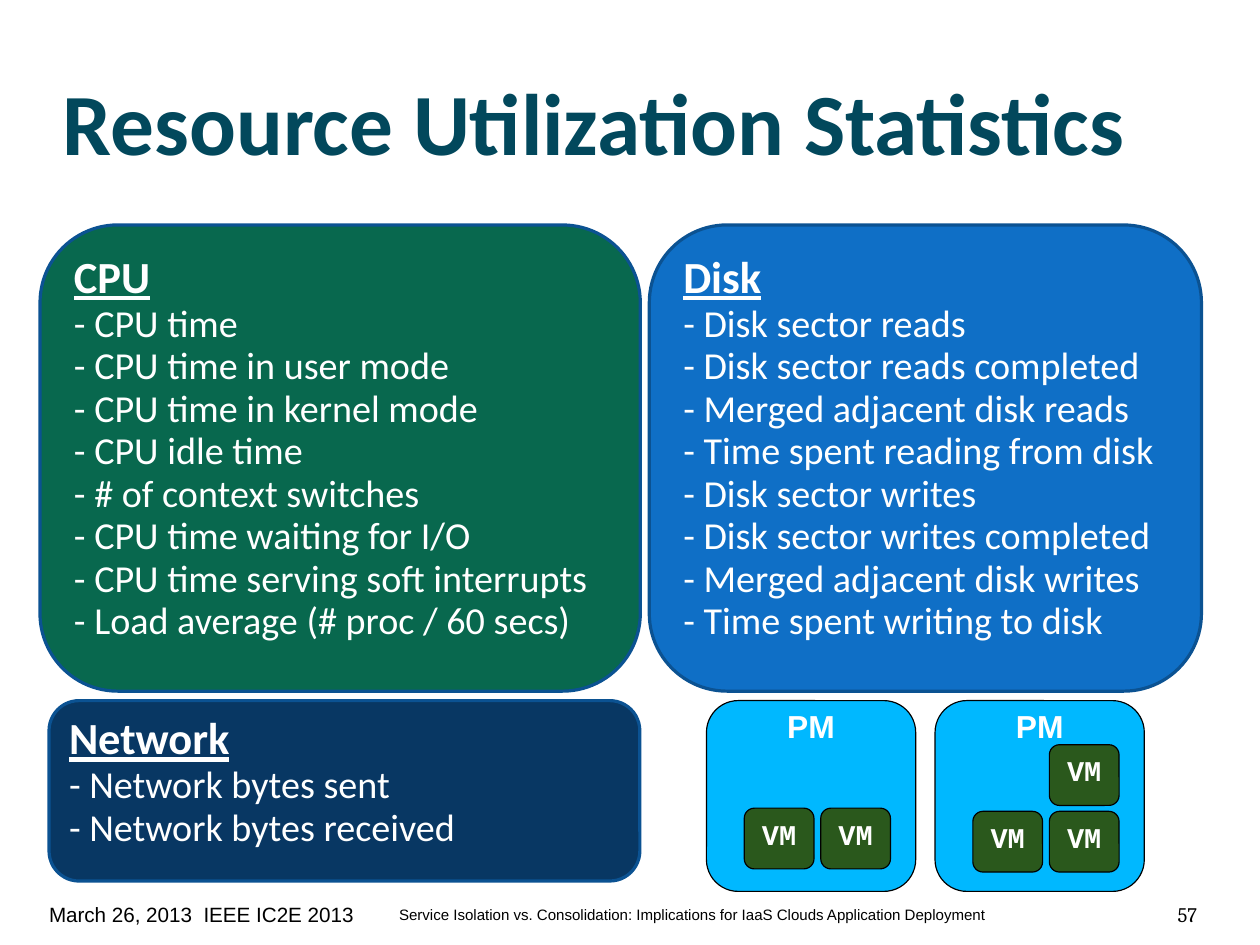
import pptx
import pptx.dml.color
import pptx.enum.shapes
import pptx.enum.text
import pptx.util

Cm, Pt = pptx.util.Cm, pptx.util.Pt
ALIGN = pptx.enum.text.PP_ALIGN
ANCHOR = pptx.enum.text.MSO_ANCHOR

COLORS = {
    "title": "02485C", "text": "000000", "light": "FFFFFF",
    "cpu": "08684E", "disk": "0F6FC6", "network": "083763",
    "card_line": "0B5292", "pm": "00B8FF", "vm": "2A581C",
}

# Content: cards as (heading, colour, box in cm, items)
TITLE = "Resource Utilization Statistics"
CARDS = [
    ("CPU", "cpu", (0.89, 5.0, 13.34, 10.36), [
        "CPU time", "CPU time in user mode", "CPU time in kernel mode",
        "CPU idle time", "# of context switches", "CPU time waiting for I/O",
        "CPU time serving soft interrupts", "Load average (# proc / 60 secs)"]),
    ("Disk", "disk", (14.43, 5.0, 12.27, 10.36), [
        "Disk sector reads", "Disk sector reads completed",
        "Merged adjacent disk reads", "Time spent reading from disk",
        "Disk sector writes", "Disk sector writes completed",
        "Merged adjacent disk writes", "Time spent writing to disk"]),
    ("Network", "network", (1.09, 15.57, 13.13, 4.01), [
        "Network bytes sent", "Network bytes received"]),
]
# Machines: left edge, top of the lower VM row, VM slots as (column, row up)
MACHINES = [
    (15.7, 17.96, [(1, 0), (0, 0)]),
    (20.78, 18.03, [(1, 1), (0, 0), (1, 0)]),
]
PM_TOP, PM_W, PM_H = 15.57, 4.65, 4.24
VM_W, VM_H, VM_INDENT = 1.55, 1.35, 0.84
VM_STEP_X, VM_STEP_Y = 1.7, 1.48
# Footer: text, left, width, size, font, alignment
FOOTER_TOP, FOOTER_H = 19.76, 1.12
FOOTER = [
    ("March 26, 2013  IEEE IC2E 2013", 1.09, 7.5, 13, "Arial", ALIGN.LEFT),
    ("Service Isolation vs. Consolidation: Implications for IaaS Clouds "
     "Application Deployment", 8.87, 14.5, 9.5, "Arial", ALIGN.LEFT),
    ("57", 25.65, 0.95, 13, "Cambria", ALIGN.RIGHT),
]

prs = pptx.Presentation()
prs.slide_width, prs.slide_height = Cm(28), Cm(21)
s = prs.slides.add_slide(prs.slide_layouts[6])


def rgb(name):
    return pptx.dml.color.RGBColor.from_string(COLORS[name])


def style(p, size, font, color, bold=False, align=ALIGN.LEFT, spacing=None):
    p.font.size, p.font.name, p.font.bold = Pt(size), font, bold
    p.font.color.rgb = rgb(color)
    p.alignment, p.line_spacing = align, spacing


def frame(sp, anchor, wrap, insets=(0, 0, 0, 0)):
    tf = sp.text_frame
    tf.vertical_anchor, tf.word_wrap = anchor, wrap
    tf.margin_left, tf.margin_top, tf.margin_right, tf.margin_bottom = map(Cm, insets)
    return tf


def label(text, box, size, font, color, bold=False, align=ALIGN.LEFT, top=0):
    sp = s.shapes.add_textbox(*map(Cm, box))
    tf = frame(sp, ANCHOR.MIDDLE, True, (0, top, 0, 0))
    tf.text = text
    style(tf.paragraphs[0], size, font, color, bold, align)


def rounded(box, fill, line, width):
    sp = s.shapes.add_shape(
        pptx.enum.shapes.MSO_SHAPE.ROUNDED_RECTANGLE, *map(Cm, box))
    sp.shadow.inherit = False
    sp.fill.solid()
    sp.fill.fore_color.rgb = rgb(fill)
    sp.line.color.rgb = rgb(line)
    sp.line.width = Pt(width)
    return sp


def machine(text, box, fill, size, font, spacing=None, top=0):
    sp = rounded(box, fill, "text", 0.75)
    tf = frame(sp, ANCHOR.TOP, False, (0, top, 0, 0))
    tf.text = text
    style(tf.paragraphs[0], size, font, "light", True, ALIGN.CENTER, spacing)


# Title
label(TITLE, (1.4, -0.23, 25.2, 5.66), 55, "Calibri", "title", bold=True, top=0.15)

# Statistics cards
for heading, fill, box, items in CARDS:
    sp = rounded(box, fill, "card_line", 2)
    tf = frame(sp, ANCHOR.TOP, True, (0.25, 0.13, 0.25, 0.13))
    tf.text = "\n".join([heading] + ["- " + item for item in items])
    for p in tf.paragraphs:
        style(p, 24, "Calibri", "light", spacing=0.93)
    head = tf.paragraphs[0].font
    head.size, head.bold, head.underline = Pt(28), True, True

# Physical machines with their VMs
for left, row_top, slots in MACHINES:
    machine("PM", (left, PM_TOP, PM_W, PM_H), "pm", 20, "Arial", spacing=0.93)
    for column, row in slots:
        x = left + VM_INDENT + column * VM_STEP_X
        y = row_top - row * VM_STEP_Y
        machine("VM", (x, y, VM_W, VM_H), "vm", 18, "Courier New", top=0.12)

# Footer
for text, left, width, size, font, align in FOOTER:
    label(text, (left, FOOTER_TOP, width, FOOTER_H), size, font, "text", align=align)

prs.save("out.pptx")
